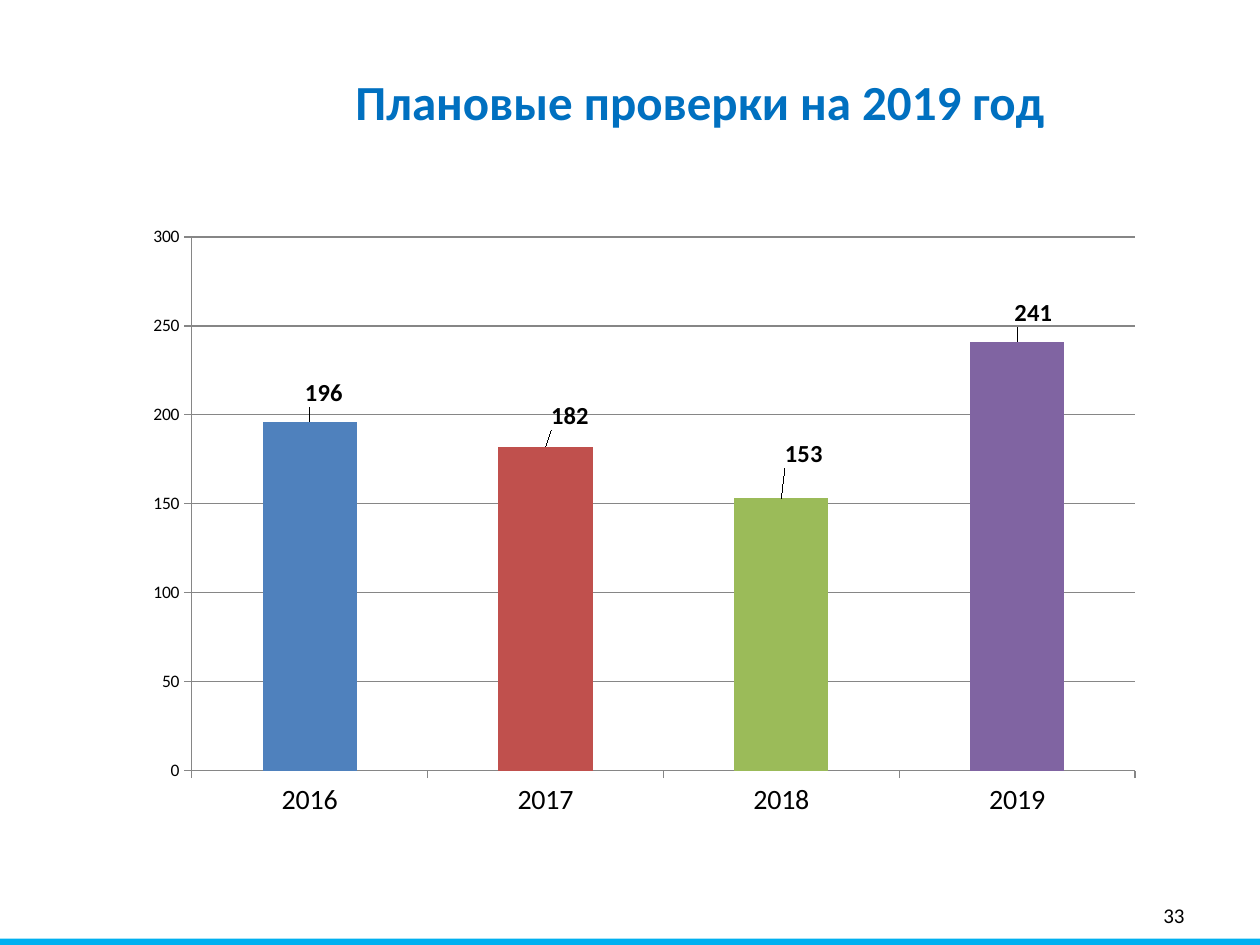
from dataclasses import dataclass
from lxml.etree import SubElement
from pptx import Presentation
from pptx.chart.data import CategoryChartData as Data
from pptx.dml.color import RGBColor as RGB
from pptx.enum.chart import XL_CHART_TYPE as Kind, XL_LABEL_POSITION as Spot, XL_TICK_MARK as Tick
from pptx.enum.shapes import MSO_SHAPE as Form
from pptx.enum.text import MSO_ANCHOR as Anchor, PP_ALIGN as Align
from pptx.oxml import parse_xml
from pptx.oxml.ns import nsdecls, qn
from pptx.util import Pt

TITLE = "Плановые проверки на 2019 год"
PAGE = "33"
CHECKS = [
    ("2016", 196, "4F81BD", (0.014, -0.015)),
    ("2017", 182, "C0504D", (0.024, -0.018)),
    ("2018", 153, "9BBB59", (0.022, -0.04)),
    ("2019", 241, "8064A2", (0.016, -0.015)),
]
PLOT = {"x": 0.057, "y": 0.037, "w": 0.923, "h": 0.868}


@dataclass(frozen=True)
class Theme:
    font: str = "Calibri"
    ink: str = "000000"
    head: str = "0070C0"
    bar: str = "00B0F0"
    grid: str = "868686"
    title: int = 28
    year: int = 16
    label: int = 14
    page: int = 12
    axis: int = 10


LOOK = Theme()


def style(font, size, color=LOOK.ink, bold=False):
    font.name, font.size, font.bold = LOOK.font, Pt(size), bold
    font.color.rgb = RGB.from_string(color)


def write(shape, text, size, color=LOOK.ink, bold=False, align=Align.LEFT, anchor=Anchor.TOP):
    frame = shape.text_frame
    frame.word_wrap, frame.vertical_anchor = True, anchor
    para = frame.paragraphs[0]
    para.alignment = align
    run = para.add_run()
    run.text = text
    style(run.font, size, color, bold)


def place(shape, *box):
    shape.left, shape.top, shape.width, shape.height = map(Pt, box)


def layout(**vals):
    root = parse_xml(f"<c:layout {nsdecls('c')}><c:manualLayout/></c:layout>")
    for key, val in vals.items():
        SubElement(root[0], qn(f"c:{key}")).set("val", str(val))
    return root


def draw(slide):
    data = Data()
    data.categories = [row[0] for row in CHECKS]
    data.add_series("Series 1", [row[1] for row in CHECKS])
    box = map(Pt, (76.3, 122.4, 584, 351.4))
    chart = slide.shapes.add_chart(Kind.COLUMN_CLUSTERED, *box, data).chart
    chart.has_legend = chart.has_title = False
    style(chart.font, LOOK.axis)

    area = chart._chartSpace.chart.plotArea
    for old in area.findall(qn("c:layout")):
        area.remove(old)
    area.insert(0, layout(layoutTarget="inner", xMode="edge", yMode="edge", **PLOT))

    years, count = chart.category_axis, chart.value_axis
    for axis, size in (years, LOOK.year), (count, LOOK.axis):
        axis.major_tick_mark, axis.minor_tick_mark = Tick.OUTSIDE, Tick.NONE
        style(axis.tick_labels.font, size)
    count.minimum_scale, count.maximum_scale, count.major_unit = 0, 300, 50
    count.has_major_gridlines = True
    for line in years.format.line, count.format.line, count.major_gridlines.format.line:
        line.color.rgb, line.width = RGB.from_string(LOOK.grid), Pt(0.75)

    plot = chart.plots[0]
    plot.gap_width, plot.vary_by_categories = 150, False
    series = plot.series[0]
    for i, (_, _, color, (dx, dy)) in enumerate(CHECKS):
        point = series.points[i]
        point.format.fill.solid()
        point.format.fill.fore_color.rgb = RGB.from_string(color)
        point.data_label.position = Spot.OUTSIDE_END
        style(point.data_label.font, LOOK.label, bold=True)
        label = series._element.xpath(f"c:dLbls/c:dLbl[c:idx/@val='{i}']")[0]
        label.insert(1, layout(x=dx, y=dy))
    series.data_labels.show_value = True
    style(series.data_labels.font, LOOK.label, bold=True)


def main():
    """Build the slide with the yearly chart of planned checks."""
    deck = Presentation()
    deck.slide_width, deck.slide_height = Pt(720), Pt(540)
    slide = deck.slides.add_slide(deck.slide_layouts[5])
    shapes = slide.shapes

    strip = shapes.add_shape(Form.RECTANGLE, *map(Pt, (0, 536.4, 720, 3.6)))
    strip.shadow.inherit = False
    strip.fill.solid()
    strip.fill.fore_color.rgb = RGB.from_string(LOOK.bar)
    strip.line.fill.background()

    page = shapes.add_textbox(*map(Pt, (516, 508.5, 168, 28.8)))
    write(page, PAGE, LOOK.page, align=Align.RIGHT, anchor=Anchor.MIDDLE)
    draw(slide)

    place(shapes.title, 156.2, 37.4, 487.4, 41)
    write(shapes.title, TITLE, LOOK.title, LOOK.head, True, Align.CENTER)
    deck.save("out.pptx")


if __name__ == "__main__":
    main()
